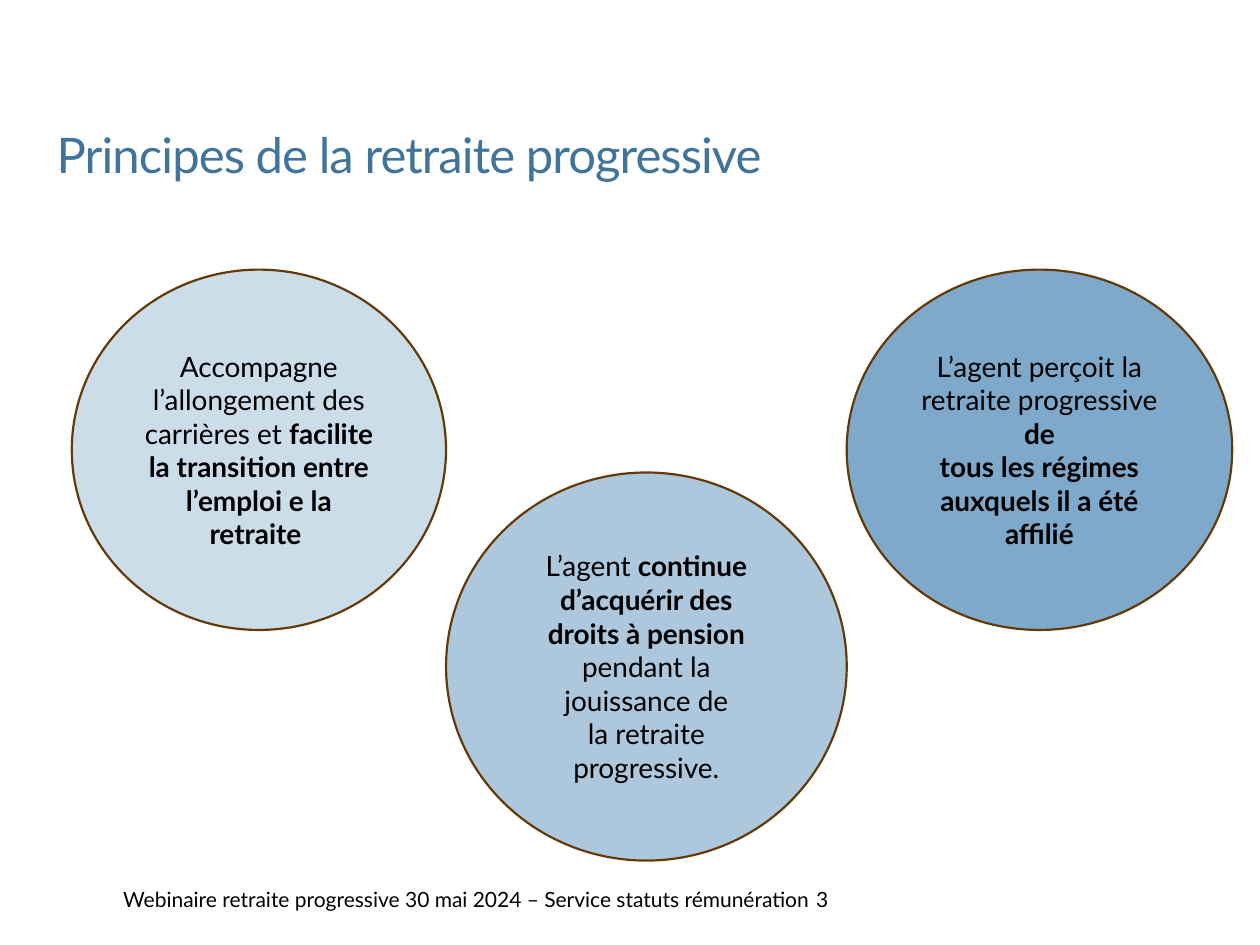
from pptx import Presentation
from pptx import util as u
from pptx.dml.color import RGBColor
from pptx.enum import shapes, text

HUES = {
    "ink": "000000",
    "title": "40749B",
    "edge": "643908",
    "pale": "CCDDEA",
    "mid": "ADC8DD",
    "deep": "7EA9CA",
}


def hue(name):
    return RGBColor.from_string(HUES[name])


def apply(item, values):
    for key, value in values.items():
        setattr(item, key, value)


class Deck:
    face = "Lato"

    def __init__(self, wide, high):
        self.prs = Presentation()
        apply(self.prs, {"slide_width": u.Inches(wide), "slide_height": u.Inches(high)})
        self.slide = self.prs.slides.add_slide(self.prs.slide_layouts[5])

    def run(self, para, words, size, color="ink", bold=False):
        run = para.add_run()
        run.text = words
        apply(run.font, {"name": self.face, "size": u.Pt(size), "bold": bold})
        run.font.color.rgb = hue(color)
        return run

    def title(self, words, box):
        shape = self.slide.shapes.title
        apply(shape, dict(zip(("left", "top", "width", "height"), map(u.Inches, box))))
        frame = shape.text_frame
        apply(frame, {
            "margin_left": 0, "margin_right": 0, "word_wrap": True,
            "vertical_anchor": text.MSO_ANCHOR.TOP,
            "auto_size": text.MSO_AUTO_SIZE.NONE,
        })
        para = frame.paragraphs[0]
        apply(para, {
            "alignment": text.PP_ALIGN.LEFT, "line_spacing": 0.9,
            "space_before": u.Pt(12), "space_after": u.Pt(2),
        })
        run = self.run(para, words, 28, "title")
        run.font._element.set("spc", "-50")

    def circle(self, box, fill, lines):
        shape = self.slide.shapes.add_shape(shapes.MSO_SHAPE.OVAL, *map(u.Inches, box))
        shape.shadow.inherit = False
        shape.fill.solid()
        shape.fill.fore_color.rgb = hue(fill)
        shape.line.color.rgb = hue("edge")
        shape.line.width = u.Pt(1.25)
        frame = shape.text_frame
        apply(frame, {"word_wrap": True, "vertical_anchor": text.MSO_ANCHOR.MIDDLE})
        for i, parts in enumerate(lines):
            para = frame.add_paragraph() if i else frame.paragraphs[0]
            para.alignment = text.PP_ALIGN.CENTER
            for words, bold in parts:
                self.run(para, words, 16, bold=bold)

    def footer(self, words, box):
        frame = self.slide.shapes.add_textbox(*map(u.Inches, box)).text_frame
        frame.word_wrap = True
        self.run(frame.paragraphs[0], words, 12)


def main():
    deck = Deck(10, 7.5)
    deck.footer(
        "Webinaire retraite progressive 30 mai 2024 – Service statuts rémunération \t3",
        (0.88, 6.99, 8.74, 0.3),
    )
    deck.title("Principes de la retraite progressive", (0.45, 0.99, 9.1, 4.7))
    rings = [
        (2.14, 2.97, 2.86, "pale", [
            [("Accompagne l’allongement des carrières et ", False),
             ("facilite la transition entre l’emploi e la retraite ", True)],
        ]),
        (3.75, 3.18, 3.08, "mid", [
            [("L’agent ", False), ("continue", True)],
            [("d’acquérir des", True)],
            [("droits à pension", True)],
            [("pendant la jouissance de", False)],
            [("la retraite progressive.", False)],
        ]),
        (2.14, 3.06, 2.86, "deep", [
            [("L’agent perçoit la", False)],
            [("retraite progressive ", False), ("de", True)],
            [("tous les régimes", True)],
            [("auxquels il a été", True)],
            [("affilié", True)],
        ]),
    ]
    left = 0.57
    for top, wide, high, fill, lines in rings:
        deck.circle((left, top, wide, high), fill, lines)
        left += wide
    deck.prs.save("out.pptx")


if __name__ == "__main__":
    main()
